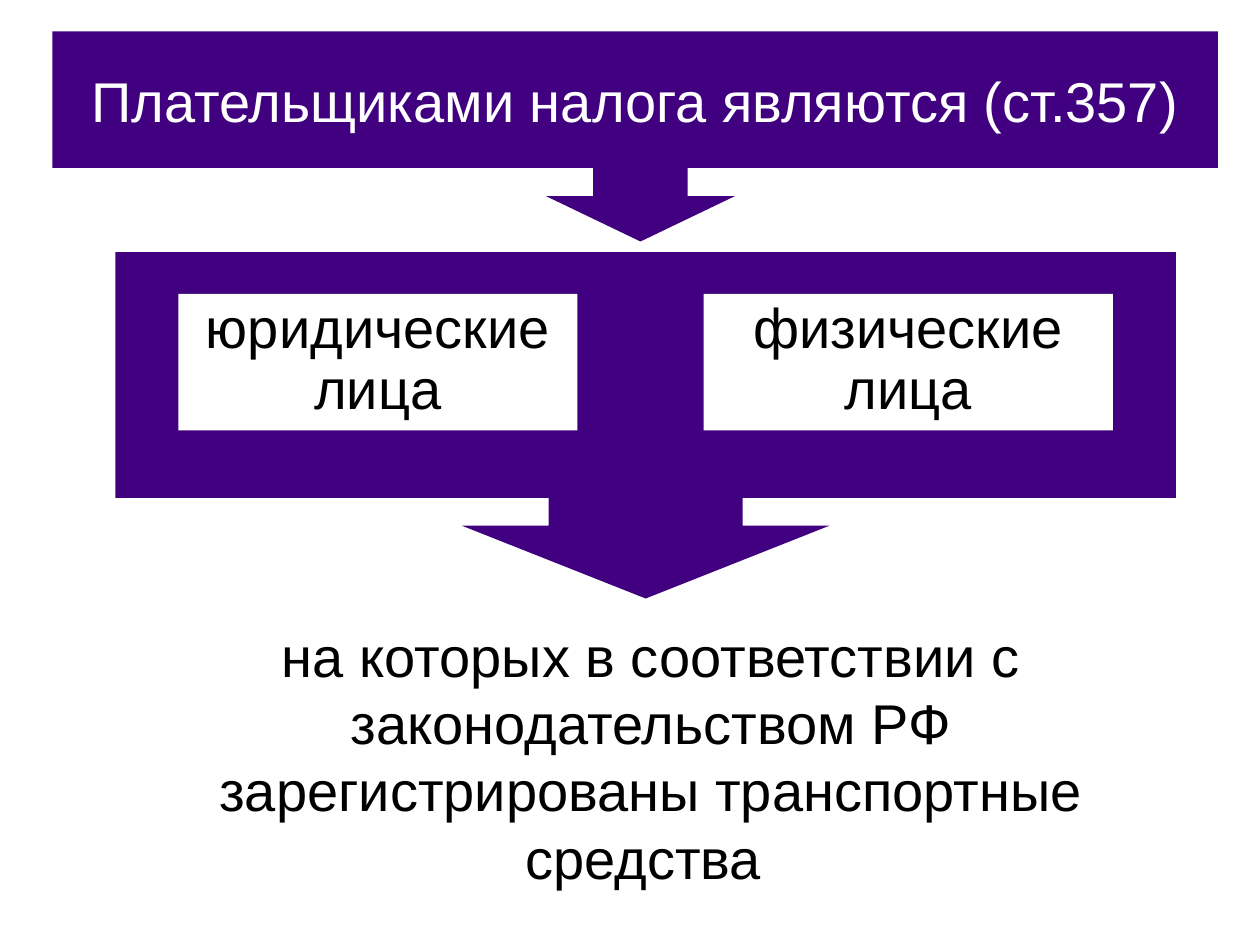
from pptx import Presentation
from pptx.dml.color import RGBColor
from pptx.enum import shapes, text
from pptx.util import Emu, Pt

PX = 914400 // 120  # 120 px to the inch


class Theme:
    purple = RGBColor(0x40, 0x00, 0x80)
    white = RGBColor(0xFF, 0xFF, 0xFF)
    black = RGBColor(0x00, 0x00, 0x00)
    font = "Arial"
    size = Pt(32)


presentation = Presentation()
presentation.slide_width = Emu(1200 * PX)
presentation.slide_height = Emu(900 * PX)
slide = presentation.slides.add_slide(presentation.slide_layouts[6])


def add_block(kind, box, fill, adjustments=()):
    shape = slide.shapes.add_shape(kind, *(Emu(n * PX) for n in box))
    shape.shadow.inherit = False
    shape.fill.solid()
    shape.fill.fore_color.rgb = fill
    shape.line.fill.background()
    for index, value in enumerate(adjustments):
        shape.adjustments[index] = value
    return shape


def write(shape, words, color=Theme.black, anchor=text.MSO_ANCHOR.MIDDLE, spacing=None):
    frame = shape.text_frame
    frame.word_wrap = True
    frame.vertical_anchor = anchor
    paragraph = frame.paragraphs[0]
    paragraph.alignment = text.PP_ALIGN.CENTER
    paragraph.line_spacing = spacing
    run = paragraph.add_run()
    run.text = words
    run.font.name = Theme.font
    run.font.size = Theme.size
    run.font.color.rgb = color


# Arrow from the title, and the callout that holds both kinds of payer
kinds = shapes.MSO_SHAPE
add_block(kinds.DOWN_ARROW, (520, 150, 180, 80), Theme.purple, (0.5, 0.54))
add_block(kinds.DOWN_ARROW_CALLOUT, (110, 240, 1010, 330), Theme.purple,
          (0.56, 0.53, 0.21, 0.71))

# Title band
title = add_block(kinds.RECTANGLE, (50, 30, 1110, 130), Theme.purple)
write(title, "Плательщиками налога являются (ст.357)", color=Theme.white)

# Kinds of payer
for left, width, payer in ((170, 380, "юридические лица"), (670, 390, "физические лица")):
    card = add_block(kinds.RECTANGLE, (left, 280, width, 130), Theme.white)
    write(card, payer, anchor=text.MSO_ANCHOR.TOP, spacing=0.9)

# Condition below the arrow
condition = slide.shapes.add_textbox(*(Emu(n * PX) for n in (160, 600, 920, 240)))
write(condition, "на которых в соответствии с законодательством РФ "
                 "зарегистрированы транспортные средства ")

presentation.save("out.pptx")
